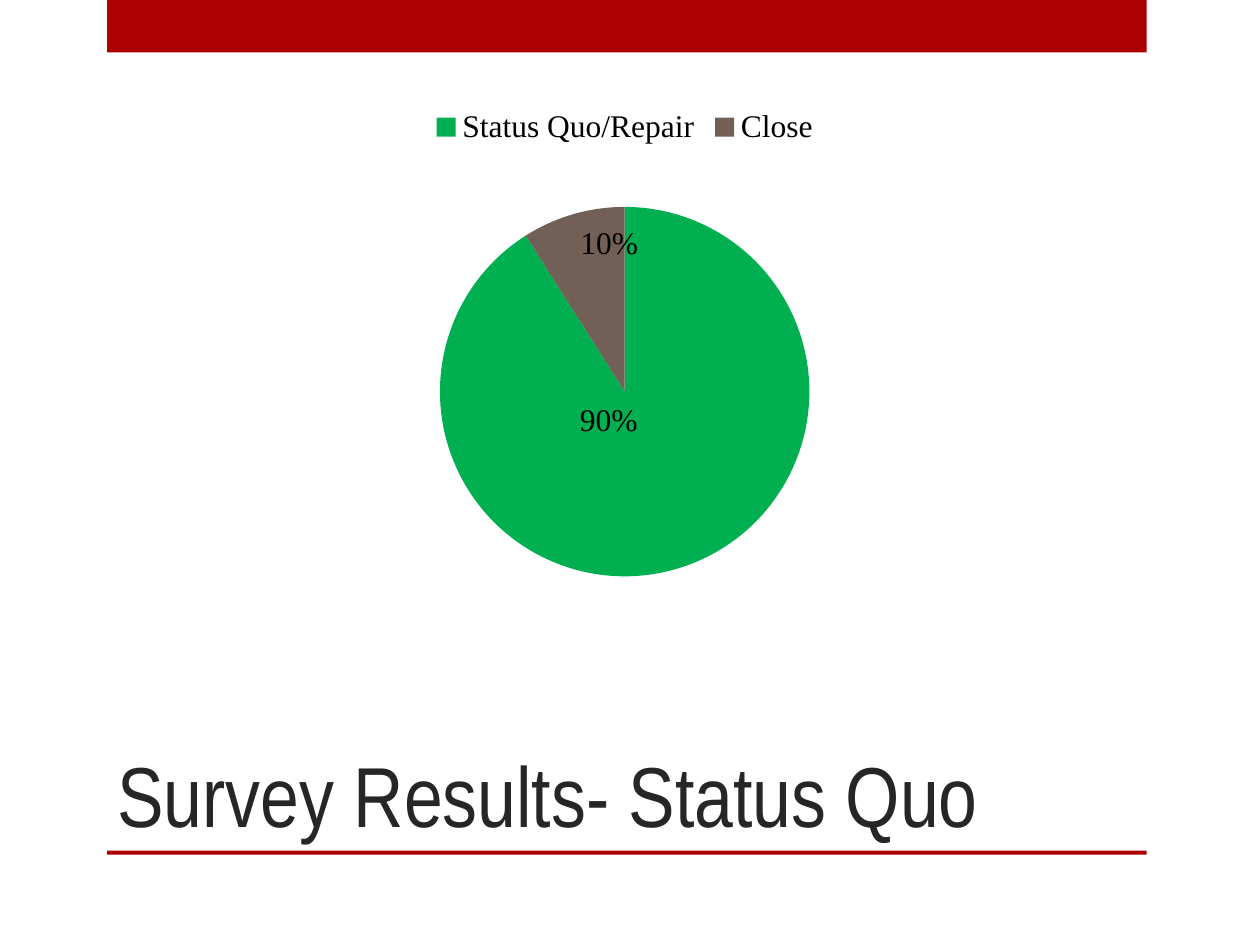
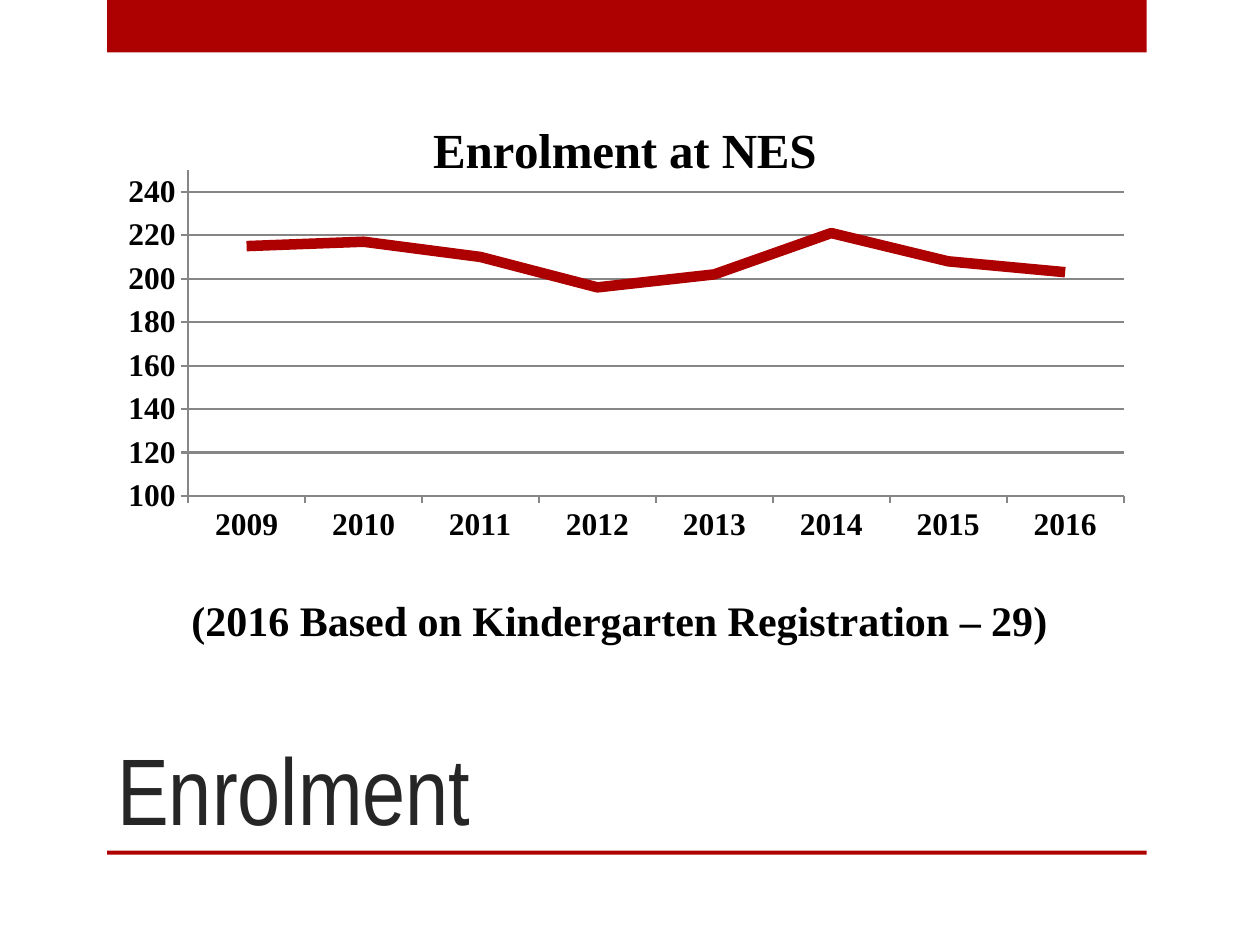
from pptx import Presentation
from pptx.chart.data import CategoryChartData
from pptx.dml.color import RGBColor
from pptx.enum.chart import (XL_CHART_TYPE, XL_LABEL_POSITION, XL_LEGEND_POSITION,
                             XL_TICK_LABEL_POSITION, XL_TICK_MARK)
from pptx.enum.shapes import MSO_SHAPE
from pptx.enum.text import MSO_ANCHOR, PP_ALIGN
from pptx.oxml import parse_xml
from pptx.oxml.ns import nsdecls, qn
from pptx.util import Inches, Pt

# The slide is a grid of 120 columns by 90 rows; boxes are (left, top, width, height).
CELL = Inches(10) / 120
COLUMNS, ROWS = 120, 90
LEFT, WIDTH = 10, 99
BAND_LEFT = 10.2
TITLE_BOTTOM = 81

RED, GREEN, BROWN = "AD0101", "00B050", "726056"
BLACK, TITLE_GREY, AXIS_GREY = "000000", "262626", "868686"
TITLE_FONT, BODY_FONT = "Arial Narrow", "Times New Roman"


def color(hex_string):
    return RGBColor.from_string(hex_string)


def grid(box):
    return [round(cells * CELL) for cells in box]


def style_font(font, name, size, hex_string, bold=False):
    font.name, font.size, font.bold = name, Pt(size), bold
    font.color.rgb = color(hex_string)


def add_band(page, top, height):
    band = page.shapes.add_shape(MSO_SHAPE.RECTANGLE, *grid((BAND_LEFT, top, WIDTH, height)))
    band.shadow.inherit = False
    band.fill.solid()
    band.fill.fore_color.rgb = color(RED)
    band.line.fill.background()


def add_text(page, box, text, name, size, hex_string, bold=False,
             anchor=MSO_ANCHOR.TOP, align=PP_ALIGN.LEFT):
    frame = page.shapes.add_textbox(*grid(box)).text_frame
    frame.word_wrap = True
    frame.vertical_anchor = anchor
    para = frame.paragraphs[0]
    para.alignment = align
    span = para.add_run()
    span.text = text
    style_font(span.font, name, size, hex_string, bold)


def add_page(deck, title, size, width, height):
    """Add a slide with the red bands and a title resting on the lower one."""
    page = deck.slides.add_slide(deck.slide_layouts[6])
    add_band(page, 0, 5)
    add_band(page, TITLE_BOTTOM, 0.4)
    add_text(page, (LEFT, TITLE_BOTTOM - height, width, height), title,
             TITLE_FONT, size, TITLE_GREY, anchor=MSO_ANCHOR.BOTTOM)
    return page


def add_chart(page, box, kind, categories, values):
    data = CategoryChartData()
    data.categories = categories
    data.add_series("Series 1", values)
    chart = page.shapes.add_chart(kind, *grid(box), data).chart
    style_font(chart.font, BODY_FONT, 18, BLACK)
    chart.has_legend = False
    chart.has_title = False
    return chart


def set_layout(parent, index, **settings):
    """Give a chart part a manual layout, in shares of the chart's size."""
    for old in parent.findall(qn("c:layout")):
        parent.remove(old)
    items = "".join(f'<c:{key} val="{value}"/>' for key, value in settings.items())
    parent.insert(index, parse_xml(
        f'<c:layout {nsdecls("c")}><c:manualLayout>{items}</c:manualLayout></c:layout>'))


def set_plot_area(chart, left, top, width, height):
    set_layout(chart.element.find(".//" + qn("c:plotArea")), 0, layoutTarget="inner",
               xMode="edge", yMode="edge", x=left, y=top, w=width, h=height)


def add_survey_pie(page, box):
    chart = add_chart(page, box, XL_CHART_TYPE.PIE, ["Status Quo/Repair", "Close"], [91, 9])
    chart.has_legend = True
    chart.legend.position = XL_LEGEND_POSITION.TOP
    chart.legend.include_in_layout = False
    set_plot_area(chart, 0.32, 0.21, 0.36, 0.69)
    plot = chart.plots[0]
    plot.vary_by_categories = True
    slices = [(GREEN, "90%"), (BROWN, "10%")]
    for number, (hex_string, text) in enumerate(slices):
        point = plot.series[0].points[number]
        point.format.fill.solid()
        point.format.fill.fore_color.rgb = color(hex_string)
        span = point.data_label.text_frame.paragraphs[0].add_run()
        span.text = text
        style_font(span.font, BODY_FONT, 18, BLACK)
        point.data_label.position = XL_LABEL_POSITION.CENTER
    offsets = [(-0.04, -0.11), (0.01, -0.11)]
    for label, (right, down) in zip(chart.element.iter(qn("c:dLbl")), offsets):
        set_layout(label, 1, x=right, y=down)


def style_axis(axis):
    style_font(axis.tick_labels.font, BODY_FONT, 18, BLACK, bold=True)
    axis.major_tick_mark = XL_TICK_MARK.OUTSIDE
    axis.minor_tick_mark = XL_TICK_MARK.NONE
    style_line(axis.format.line, AXIS_GREY, 1.25)


def style_line(line, hex_string, width):
    line.color.rgb = color(hex_string)
    line.width = Pt(width)


def add_enrolment_lines(page, box):
    years = [str(year) for year in range(2009, 2017)]
    chart = add_chart(page, box, XL_CHART_TYPE.LINE_STACKED, years,
                      [215, 217, 210, 196, 202, 221, 208, 203])
    chart.has_title = True
    span = chart.chart_title.text_frame.paragraphs[0].add_run()
    span.text = "Enrolment at NES"
    style_font(span.font, BODY_FONT, 28, BLACK, bold=True)
    set_plot_area(chart, 0.08, 0.16, 0.9, 0.69)
    plot = chart.plots[0]
    plot.vary_by_categories = False
    plot.series[0].smooth = False
    style_line(plot.series[0].format.line, RED, 6)
    style_axis(chart.category_axis)
    chart.category_axis.tick_label_position = XL_TICK_LABEL_POSITION.LOW
    scale = chart.value_axis
    style_axis(scale)
    scale.minimum_scale, scale.maximum_scale, scale.major_unit = 100, 250, 20
    scale.has_major_gridlines = True
    style_line(scale.major_gridlines.format.line, AXIS_GREY, 1.25)


def add_survey_page(deck):
    page = add_page(deck, "Survey Results- Status Quo", 48.6, WIDTH, 21)
    add_survey_pie(page, (LEFT, 9, WIDTH, 51))


def add_enrolment_page(deck):
    page = add_page(deck, "Enrolment", 54, 89, 12)
    add_text(page, (13, 56, 92, 6), "(2016 Based on Kindergarten Registration – 29)",
             BODY_FONT, 24, BLACK, bold=True, align=PP_ALIGN.CENTER)
    add_enrolment_lines(page, (LEFT, 9, WIDTH, 45))


def main():
    deck = Presentation()
    deck.slide_width, deck.slide_height = grid((COLUMNS, ROWS))
    add_survey_page(deck)
    add_enrolment_page(deck)
    deck.save("out.pptx")


if __name__ == "__main__":
    main()
